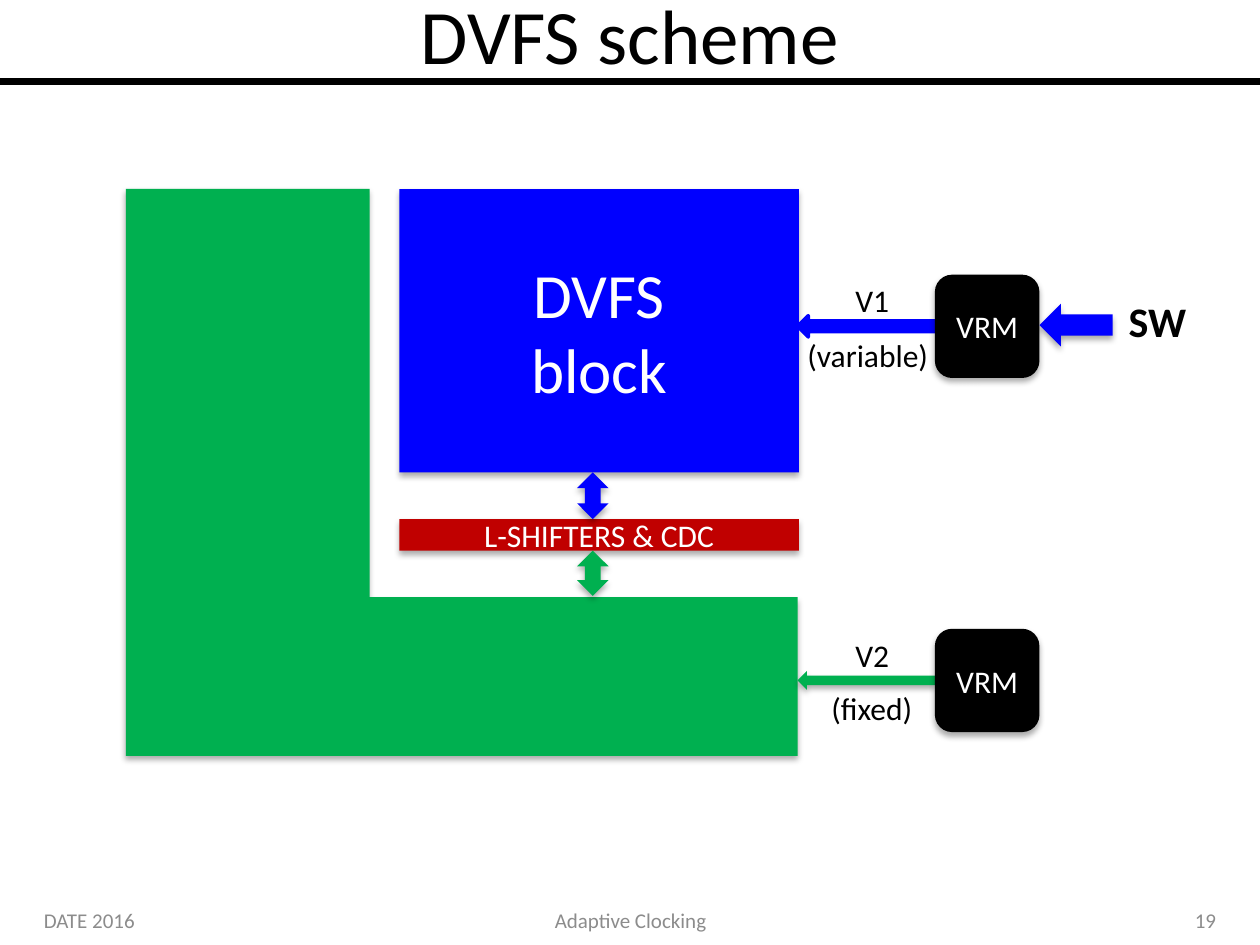
"""Build the DVFS scheme slide: two voltage domains and their supplies."""
from lxml.etree import SubElement
from pptx import Presentation
from pptx.dml.color import RGBColor
from pptx.enum.shapes import MSO_CONNECTOR, MSO_SHAPE
from pptx.enum.text import MSO_ANCHOR, MSO_AUTO_SIZE, PP_ALIGN
from pptx.oxml.ns import qn
from pptx.util import Inches, Pt

THEME = {
    "font": "Calibri",
    "black": "000000", "white": "FFFFFF", "gray": "8C8C8C",
    "blue": "0000FF", "green": "00B050", "red": "C00000",
    "title": 44, "block": 36, "software": 24, "label": 18, "footer": 12,
}
SHADOW = {"blurRad": Pt(3.5), "dist": Pt(2.2), "dir": 90 * 60000, "rotWithShape": 0}
SHADOW_ALPHA = 32000

TITLE = ("DVFS scheme", (0.5, -0.11, 9, 0.75))
RULE_TOP = 0.65
FOOTERS = [
    ("DATE 2016", 0.25, 2.33, PP_ALIGN.LEFT),
    ("Adaptive Clocking", 3.42, 3.17, PP_ALIGN.CENTER),
    ("19", 7.42, 2.33, PP_ALIGN.RIGHT),
]
FOOTER_TOP, FOOTER_HEIGHT = 7.1, 0.4

DOMAIN = (1, 1.5, 5.33, 4.5)
DOMAIN_LEGS = (0.28, 0.43)
BLOCKS = [
    ("DVFS\nblock", (3.17, 1.5, 3.17, 2.25), "blue", "block"),
    ("L-SHIFTERS & CDC", (3.17, 4.12, 3.17, 0.25), "red", "label"),
]
LINKS = [(3.75, 0.37, "blue"), (4.37, 0.36, "green")]
LINK_LEFT, LINK_WIDTH = 4.58, 0.25

SUPPLIES = [
    {"middle": 2.59, "color": "blue", "arrow": 0.17, "outline": 2,
     "labels": [("V1", (6.69, 2.18, 0.47, 0.4)), ("(variable)", (6.31, 2.62, 1.17, 0.4))]},
    {"middle": 5.4, "color": "green", "arrow": 0.15, "outline": 0,
     "labels": [("V2", (6.69, 5, 0.47, 0.4)), ("(fixed)", (6.5, 5.42, 0.85, 0.4))]},
]
SUPPLY_LEFT, REGULATOR_LEFT = 6.33, 7.42
REGULATOR_WIDTH, REGULATOR_HEIGHT = 0.83, 0.82
SOFTWARE_ARROW = (8.25, 2.41, 0.58, 0.34)
SOFTWARE = ("SW", (8.86, 2.3, 0.66, 0.5))


def color(name):
    return RGBColor.from_string(THEME[name])


def apply(target, values):
    for name, value in values.items():
        setattr(target, name, value)


def write(box, text, size, ink, align, bold=False):
    para = box.text_frame.paragraphs[0]
    para.alignment = align
    for index, line in enumerate(text.split("\n")):
        if index:
            para.add_line_break()
        span = para.add_run()
        span.text = line
        apply(span.font, {"name": THEME["font"], "size": Pt(THEME[size]), "bold": bold})
        span.font.color.rgb = color(ink)


def add_text(page, text, area, size, ink="black", align=PP_ALIGN.CENTER):
    box = page.shapes.add_textbox(*map(Inches, area))
    apply(box.text_frame, {"word_wrap": True, "vertical_anchor": MSO_ANCHOR.MIDDLE})
    write(box, text, size, ink, align)


def add_label(page, text, area, size="label", bold=False):
    box = page.shapes.add_textbox(*map(Inches, area))
    apply(box.text_frame, {"word_wrap": False, "auto_size": MSO_AUTO_SIZE.SHAPE_TO_FIT_TEXT})
    write(box, text, size, "black", PP_ALIGN.LEFT, bold)


def add_shadow(shape):
    effects = shape._element.spPr.find(qn("a:effectLst"))
    shadow = SubElement(effects, qn("a:outerShdw"))
    for name, value in SHADOW.items():
        shadow.set(name, str(int(value)))
    ink = SubElement(shadow, qn("a:srgbClr"), val=THEME["black"])
    SubElement(ink, qn("a:alpha"), val=str(SHADOW_ALPHA))


def add_part(page, kind, area, fill, text="", size="label", outline=0):
    shape = page.shapes.add_shape(kind, *map(Inches, area))
    shape.shadow.inherit = False
    shape.fill.solid()
    shape.fill.fore_color.rgb = color(fill)
    if outline:
        shape.line.color.rgb = color(fill)
        shape.line.width = Pt(outline)
    else:
        shape.line.fill.background()
        add_shadow(shape)
    if text:
        apply(shape.text_frame, {"word_wrap": True, "vertical_anchor": MSO_ANCHOR.MIDDLE})
        write(shape, text, size, "white", PP_ALIGN.CENTER)
    return shape


def add_frame(page, width):
    rule = page.shapes.add_connector(
        MSO_CONNECTOR.STRAIGHT, 0, Inches(RULE_TOP), width, Inches(RULE_TOP))
    rule.line.color.rgb = color("black")
    rule.line.width = Pt(4)
    SubElement(rule._element.spPr, qn("a:effectLst"))
    add_text(page, *TITLE, "title")
    for text, left, span, align in FOOTERS:
        add_text(page, text, (left, FOOTER_TOP, span, FOOTER_HEIGHT), "footer", "gray", align)


def add_supply(page, supply):
    middle, height = supply["middle"], supply["arrow"]
    arrow = (SUPPLY_LEFT, middle - height / 2, REGULATOR_LEFT - SUPPLY_LEFT, height)
    add_part(page, MSO_SHAPE.LEFT_ARROW, arrow, supply["color"], outline=supply["outline"])
    regulator = (REGULATOR_LEFT, middle - REGULATOR_HEIGHT / 2, REGULATOR_WIDTH, REGULATOR_HEIGHT)
    add_part(page, MSO_SHAPE.ROUNDED_RECTANGLE, regulator, "black", "VRM")
    for text, area in supply["labels"]:
        add_label(page, text, area)


def main():
    deck = Presentation()
    apply(deck, {"slide_width": Inches(10), "slide_height": Inches(7.5)})
    page = deck.slides.add_slide(deck.slide_layouts[6])
    add_frame(page, deck.slide_width)
    domain = add_part(page, MSO_SHAPE.CORNER, DOMAIN, "green")
    for index, leg in enumerate(DOMAIN_LEGS):
        domain.adjustments[index] = leg
    for text, area, fill, size in BLOCKS:
        add_part(page, MSO_SHAPE.RECTANGLE, area, fill, text, size)
    for top, height, fill in LINKS:
        add_part(page, MSO_SHAPE.UP_DOWN_ARROW, (LINK_LEFT, top, LINK_WIDTH, height), fill)
    for supply in SUPPLIES:
        add_supply(page, supply)
    add_part(page, MSO_SHAPE.LEFT_ARROW, SOFTWARE_ARROW, "blue")
    add_label(page, *SOFTWARE, "software", bold=True)
    deck.save("out.pptx")


if __name__ == "__main__":
    main()
